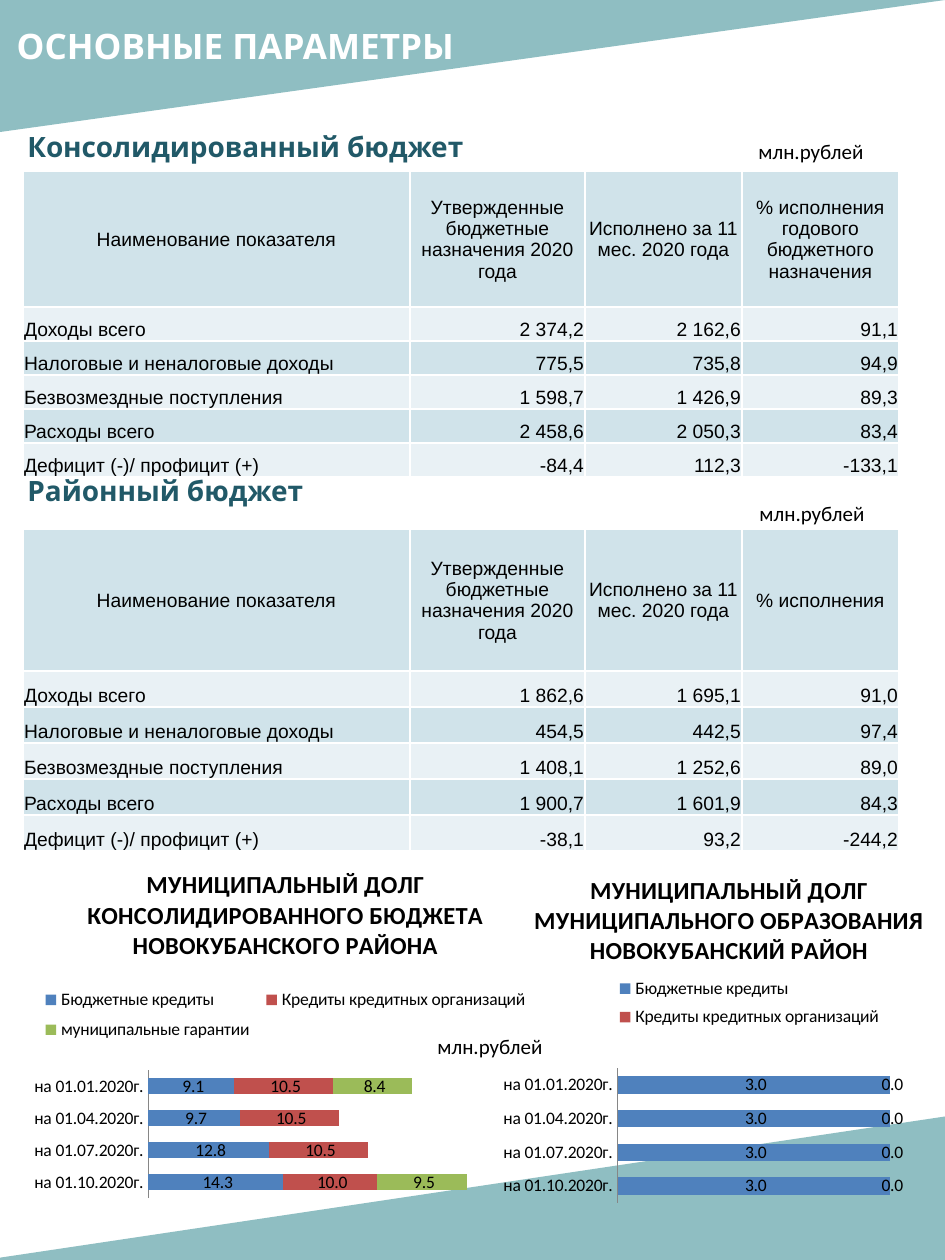
from lxml.etree import SubElement
from pptx import Presentation
from pptx.chart.data import CategoryChartData
from pptx.dml.color import RGBColor
from pptx.enum.chart import XL_CHART_TYPE, XL_LEGEND_POSITION, XL_TICK_MARK
from pptx.enum.shapes import MSO_SHAPE
from pptx.enum.text import MSO_ANCHOR, MSO_AUTO_SIZE, PP_ALIGN
from pptx.oxml.ns import qn
from pptx.util import Emu, Pt

EMU_PER_PX = 914400 / 126
TRIANGLE = MSO_SHAPE.RIGHT_TRIANGLE
STACKED_BARS = XL_CHART_TYPE.BAR_STACKED
LEGEND_TOP = XL_LEGEND_POSITION.TOP
NO_TICKS = XL_TICK_MARK.NONE
TOP, MIDDLE, BOTTOM = MSO_ANCHOR.TOP, MSO_ANCHOR.MIDDLE, MSO_ANCHOR.BOTTOM
LEFT, CENTER, RIGHT = PP_ALIGN.LEFT, PP_ALIGN.CENTER, PP_ALIGN.RIGHT
FIT_SHAPE = MSO_AUTO_SIZE.SHAPE_TO_FIT_TEXT

UNIT = "млн.рублей"
COLUMN_WIDTHS = [387, 175, 157, 157]
HEADINGS = ["Наименование показателя", "Утвержденные бюджетные назначения 2020 года",
            "Исполнено за 11 мес. 2020 года"]
INDICATORS = ["Доходы всего", "Налоговые и неналоговые доходы", "Безвозмездные поступления",
              "Расходы всего", "Дефицит (-)/ профицит (+)"]
CONSOLIDATED = [("2 374,2", "2 162,6", "91,1"), ("775,5", "735,8", "94,9"),
                ("1 598,7", "1 426,9", "89,3"), ("2 458,6", "2 050,3", "83,4"),
                ("-84,4", "112,3", "-133,1")]
DISTRICT = [("1 862,6", "1 695,1", "91,0"), ("454,5", "442,5", "97,4"),
            ("1 408,1", "1 252,6", "89,0"), ("1 900,7", "1 601,9", "84,3"),
            ("-38,1", "93,2", "-244,2")]
DATES = ["на 01.01.2020г.", "на 01.04.2020г.", "на 01.07.2020г.", "на 01.10.2020г."]
BUDGET_LOANS, BANK_LOANS = "Бюджетные кредиты", "Кредиты кредитных организаций"
SERIES_COLORS = ["4F81BD", "C0504D", "9BBB59"]
NUMBER_FORMAT = "#\\ ##0.0"


def px(length):
    return Emu(round(length * EMU_PER_PX))


def color(value):
    return RGBColor.from_string(value)


def add_value(parent, tag, value):
    SubElement(parent, qn(tag)).set("val", str(value))


def place(parent, position, fractions, inner=False):
    layout = parent.find(qn("c:layout"))
    if layout is None:
        layout = SubElement(parent, qn("c:layout"))
        parent.insert(position, layout)
    manual = SubElement(layout, qn("c:manualLayout"))
    if inner:
        add_value(manual, "c:layoutTarget", "inner")
    for axis in "xy":
        add_value(manual, f"c:{axis}Mode", "edge")
    for axis, fraction in zip("xywh", fractions):
        add_value(manual, f"c:{axis}", fraction)


class SlideBuilder:
    heading_font = "Karla"
    table_font = "Arial"
    body_font = "Calibri"
    accent = "519AA0"
    bands = ["D0E3EA", "E9F1F5"]
    black = "000000"
    white = "FFFFFF"

    def __init__(self, slide):
        self.slide = slide

    def style(self, paragraph, font, size, text_color, bold=False, align=LEFT):
        paragraph.alignment = align
        paragraph.font.name = font
        paragraph.font.size = Pt(size)
        paragraph.font.bold = bold
        paragraph.font.color.rgb = color(text_color)

    def triangle(self, left, top, width, height, flip):
        shape = self.slide.shapes.add_shape(TRIANGLE, px(left), px(top), px(width), px(height))
        shape.shadow.inherit = False
        shape.rotation = 180
        shape.element.spPr.xfrm.set(flip, "1")
        shape.fill.solid()
        shape.fill.fore_color.rgb = color(self.accent)
        add_value(shape.element.spPr.find(".//" + qn("a:srgbClr")), "a:alpha", 64000)
        shape.line.fill.background()

    def title(self, text, left, top, width, height):
        shape = self.slide.shapes.title
        shape.left, shape.top, shape.width, shape.height = map(px, (left, top, width, height))
        shape.element.getparent().append(shape.element)
        frame = shape.text_frame
        frame.text = text
        frame.vertical_anchor = TOP
        frame.auto_size = FIT_SHAPE
        self.style(frame.paragraphs[0], self.heading_font, 20, self.white, True)

    def text(self, text, left, top, width, height, font, size, text_color, bold, wrap):
        shape = self.slide.shapes.add_textbox(px(left), px(top), px(width), px(height))
        frame = shape.text_frame
        frame.word_wrap = wrap
        frame.auto_size = FIT_SHAPE
        frame.text = text
        self.style(frame.paragraphs[0], font, size, text_color, bold)

    def subheading(self, text, top):
        self.text(text, 15, top, 614, 45, self.heading_font, 16, "215968", True, True)

    def unit(self, left, top):
        self.text(UNIT, left, top, 130, 38, self.body_font, 12, self.black, False, False)

    def table(self, top, header_height, row_height, last_heading, values):
        rows = [HEADINGS + [last_heading]]
        rows += [[name, *numbers] for name, numbers in zip(INDICATORS, values)]
        height = header_height + row_height * len(values)
        table = self.slide.shapes.add_table(len(rows), len(COLUMN_WIDTHS), px(23), px(top),
                                            px(sum(COLUMN_WIDTHS)), px(height)).table
        table.first_row = table.horz_banding = False
        for column, width in zip(table.columns, COLUMN_WIDTHS):
            column.width = px(width)
        for row_index, row in enumerate(rows):
            table.rows[row_index].height = px(row_height if row_index else header_height)
            for column_index, text in enumerate(row):
                align = CENTER if row_index == 0 else RIGHT if column_index else LEFT
                self.cell(table.cell(row_index, column_index), text, align,
                          BOTTOM if row_index else MIDDLE, self.bands[row_index % 2])

    def cell(self, cell, text, align, anchor, fill):
        cell.text = text
        cell.vertical_anchor = anchor
        cell.margin_left = cell.margin_right = cell.margin_top = px(1)
        cell.margin_bottom = 0
        self.style(cell.text_frame.paragraphs[0], self.table_font, 11, self.black, align=align)
        properties = cell._tc.get_or_add_tcPr()
        for side in "LRTB":
            line = SubElement(properties, qn(f"a:ln{side}"), w=str(Pt(1)))
            add_value(SubElement(line, qn("a:solidFill")), "a:srgbClr", self.white)
        cell.fill.solid()
        cell.fill.fore_color.rgb = color(fill)

    def chart(self, bounds, title, series, maximum, plot_area, legend_area, title_place):
        data = CategoryChartData(number_format=NUMBER_FORMAT)
        data.categories = DATES
        for name, values in series:
            data.add_series(name, values)
        chart = self.slide.shapes.add_chart(STACKED_BARS, *map(px, bounds), data).chart
        chart.font.name = self.body_font
        chart.font.size = Pt(10)
        chart.font.color.rgb = color(self.black)
        chart.has_title = True
        chart.chart_title.text_frame.text = title
        self.style(chart.chart_title.text_frame.paragraphs[0], self.body_font, 14,
                   self.black, True, CENTER)
        chart.has_legend = True
        chart.legend.position = LEGEND_TOP
        chart.legend.include_in_layout = False
        categories = chart.category_axis
        categories.reverse_order = True
        categories.major_tick_mark = NO_TICKS
        categories.format.line.color.rgb = color("868686")
        chart.value_axis.visible = False
        chart.value_axis.has_major_gridlines = False
        chart.value_axis.minimum_scale = 0
        chart.value_axis.maximum_scale = maximum
        plot = chart.plots[0]
        plot.gap_width = 95
        plot.overlap = 100
        plot.vary_by_categories = False
        for bars, fill in zip(plot.series, SERIES_COLORS):
            bars.format.fill.solid()
            bars.format.fill.fore_color.rgb = color(fill)
            bars.data_labels.show_value = True
            bars.data_labels.number_format = NUMBER_FORMAT
            bars.data_labels.number_format_is_linked = False
            if any(bars.values):
                self.hide_zero_labels(bars)
        body = chart.element.find(qn("c:chart"))
        area = body.find(qn("c:plotArea"))
        place(area, 0, plot_area, inner=True)
        place(body.find(qn("c:legend")), 1, legend_area)
        if title_place:
            place(body.find(qn("c:title")), 1, title_place)
        SubElement(SubElement(area, qn("c:spPr")), qn("a:noFill"))
        background = SubElement(chart.element, qn("c:spPr"))
        SubElement(background, qn("a:noFill"))
        body.addnext(background)

    def hide_zero_labels(self, bars):
        labels = bars._element.get_or_add_dLbls()
        zeros = [index for index, value in enumerate(bars.values) if value == 0]
        for position, index in enumerate(zeros):
            label = SubElement(labels, qn("c:dLbl"))
            add_value(label, "c:idx", index)
            add_value(label, "c:delete", 1)
            labels.insert(position, label)


def main():
    presentation = Presentation()
    presentation.slide_width, presentation.slide_height = px(945), px(1260)
    builder = SlideBuilder(presentation.slides.add_slide(presentation.slide_layouts[5]))
    builder.triangle(0, 0, 945, 132, "flipH")
    builder.triangle(-16, 1116, 964, 144, "flipV")
    builder.title("ОСНОВНЫЕ ПАРАМЕТРЫ", 4, 18, 614, 54)
    builder.subheading("Консолидированный бюджет", 123)
    builder.subheading("Районный бюджет", 467)
    for left, top in [(746, 132), (747, 494), (425, 1027)]:
        builder.unit(left, top)
    builder.chart((0, 848, 571, 412),
                  "МУНИЦИПАЛЬНЫЙ ДОЛГ КОНСОЛИДИРОВАННОГО БЮДЖЕТА НОВОКУБАНСКОГО РАЙОНА",
                  [(BUDGET_LOANS, (9.1, 9.7, 12.8, 14.3)), (BANK_LOANS, (10.5, 10.5, 10.5, 10)),
                   ("муниципальные гарантии", (8.4, 0, 0, 9.5))],
                  40, (0.26, 0.54, 0.66, 0.31), (0.06, 0.32, 0.88, 0.17), None)
    builder.chart((398, 852, 549, 408),
                  "МУНИЦИПАЛЬНЫЙ ДОЛГ МУНИЦИПАЛЬНОГО ОБРАЗОВАНИЯ НОВОКУБАНСКИЙ РАЙОН",
                  [(BUDGET_LOANS, (3, 3, 3, 3)), (BANK_LOANS, (0, 0, 0, 0))],
                  3.5, (0.4, 0.53, 0.58, 0.33), (0.39, 0.29, 0.5, 0.16), (0.24, 0.04))
    builder.table(171, 136, 34, "% исполнения годового бюджетного назначения", CONSOLIDATED)
    builder.table(529, 142, 36, "% исполнения", DISTRICT)
    presentation.save("out.pptx")


if __name__ == "__main__":
    main()
